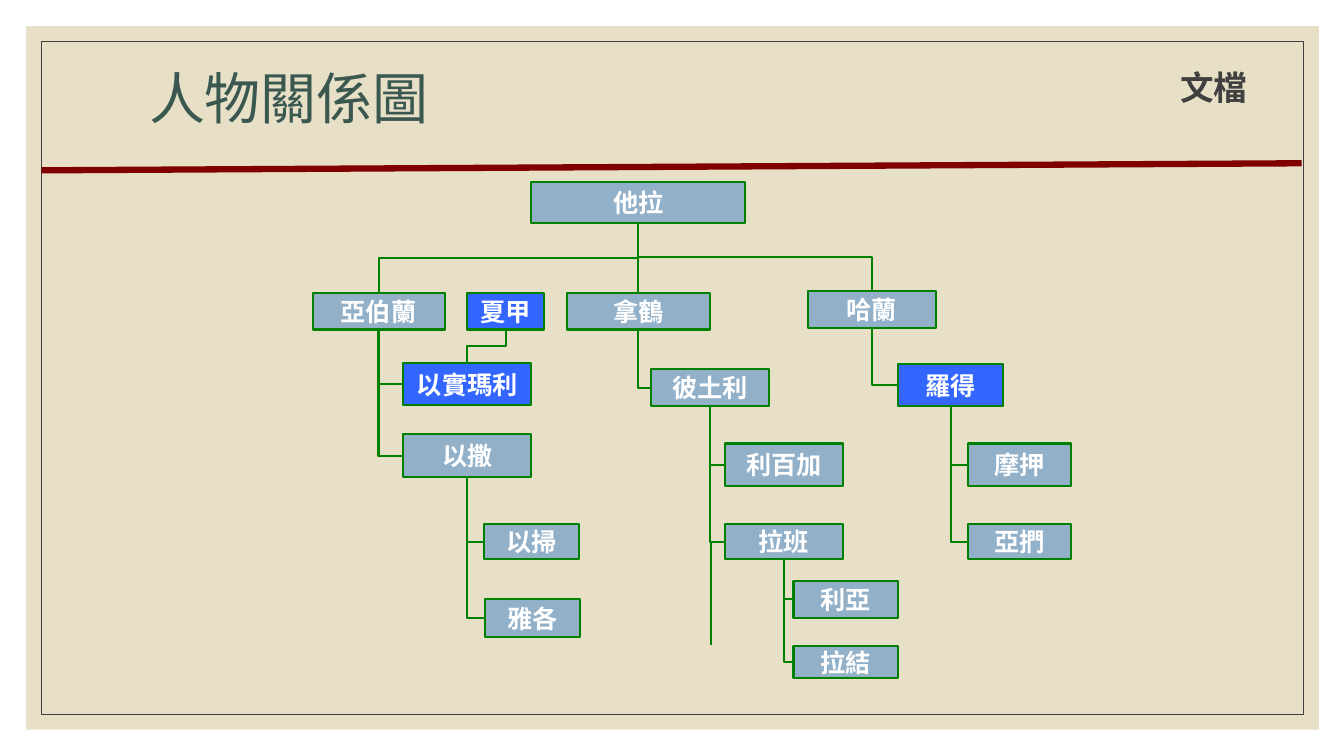
import lxml.etree
import pptx
import pptx.dml.color
import pptx.enum.shapes
import pptx.enum.text
import pptx.oxml.ns
import pptx.util

UNIT = pptx.util.Inches(1)  # one column or row of the page grid
COLORS = {"paper": "E7E0C7", "frame": "404040", "family": "92B0C8", "outsider": "3366FF",
          "branch": "008000", "rule": "800000", "title": "3A5750", "label": "FFFFFF"}
FORMATS = {
    "title": {"size": pptx.util.Pt(40), "name": "Lato", "bold": False},
    "label": {"size": pptx.util.Pt(18), "name": "Times New Roman", "bold": True},
    "frame": {"size": pptx.util.Pt(24), "name": "Times New Roman", "bold": True},
}
TOP, LEFT, BOTTOM = 0, 1, 2  # connection sites of a box

# name: (column, row, width, height)
PEOPLE = {
    "他拉": (5.27, 1.81, 2.12, 0.4),
    "亞伯蘭": (3.1, 2.91, 1.31, 0.36),
    "夏甲": (4.63, 2.91, 0.77, 0.36),
    "拿鶴": (5.62, 2.91, 1.42, 0.36),
    "哈蘭": (8.01, 2.89, 1.27, 0.36),
    "以實瑪利": (4, 3.6, 1.27, 0.42),
    "以撒": (4, 4.31, 1.27, 0.42),
    "以掃": (4.8, 5.2, 0.94, 0.35),
    "雅各": (4.81, 5.94, 0.94, 0.38),
    "彼土利": (6.46, 3.66, 1.17, 0.37),
    "利百加": (7.19, 4.4, 1.17, 0.42),
    "拉班": (7.19, 5.2, 1.17, 0.35),
    "利亞": (7.87, 5.76, 1.04, 0.37),
    "拉結": (7.87, 6.41, 1.04, 0.32),
    "羅得": (8.91, 3.61, 1.04, 0.42),
    "摩押": (9.6, 4.4, 1.02, 0.42),
    "亞捫": (9.6, 5.2, 1.02, 0.35),
}
OUTSIDERS = {"夏甲", "以實瑪利", "羅得"}
FORKS = [("他拉", "亞伯蘭"), ("他拉", "哈蘭"), ("夏甲", "以實瑪利")]
SIDE_BRANCHES = {
    "亞伯蘭": ["以實瑪利", "以撒"],
    "以撒": ["以掃", "雅各"],
    "拿鶴": ["彼土利"],
    "彼土利": ["利百加", "拉班"],
    "拉班": ["利亞", "拉結"],
    "哈蘭": ["羅得"],
    "羅得": ["摩押", "亞捫"],
}


def grid(*cells):
    return [pptx.util.Emu(round(cell * UNIT)) for cell in cells]


def rgb(color):
    return pptx.dml.color.RGBColor.from_string(COLORS[color])


def write(box, text, style, align):
    frame = box.text_frame
    frame.vertical_anchor = pptx.enum.text.MSO_ANCHOR.MIDDLE
    para = frame.paragraphs[0]
    para.alignment = align
    span = para.add_run()
    span.text = text
    for key, value in FORMATS[style].items():
        setattr(span.font, key, value)
    span.font.color.rgb = rgb(style)
    return para


def add_box(page, kind, place, fill=None, line=None, weight=0):
    box = page.shapes.add_shape(kind, *grid(*place))
    box.shadow.inherit = False
    if fill:
        box.fill.solid()
        box.fill.fore_color.rgb = rgb(fill)
    else:
        box.fill.background()
    if line:
        box.line.color.rgb = rgb(line)
        box.line.width = pptx.util.Pt(weight)
    else:
        box.line.fill.background()
    return box


def add_text(page, place, text, style, align, wrap):
    box = page.shapes.add_textbox(*grid(*place))
    box.text_frame.word_wrap = wrap
    return write(box, text, style, align)


def add_person(page, name, place):
    fill = "outsider" if name in OUTSIDERS else "family"
    kind = pptx.enum.shapes.MSO_SHAPE.FLOWCHART_PROCESS
    box = add_box(page, kind, place, fill, "branch", 1.5)
    write(box, name, "label", pptx.enum.text.PP_ALIGN.CENTER)
    return box


def add_line(page, ends=(0, 0, 0, 0), kind="STRAIGHT", color="branch", weight=1.5):
    connector_type = pptx.enum.shapes.MSO_CONNECTOR[kind]
    line = page.shapes.add_connector(connector_type, *grid(*ends))
    line.line.color.rgb = rgb(color)
    line.line.width = pptx.util.Pt(weight)
    lxml.etree.SubElement(line.element.spPr, pptx.oxml.ns.qn("a:effectLst"))
    return line


def join(page, start, start_site, end, end_site, kind="ELBOW"):
    line = add_line(page, kind=kind)
    line.begin_connect(start, start_site)
    line.end_connect(end, end_site)
    return line


def add_fork(page, parent, child):
    """Join the parent's bottom to the child's top with a level middle part."""
    line = join(page, parent, BOTTOM, child, TOP)
    goes_right = line.end_x > line.begin_x
    center_x = line.left + line.width // 2
    center_y = line.top + line.height // 2
    width, height = line.height, line.width
    turned = {"left": center_x - width // 2, "top": center_y - height // 2,
              "width": width, "height": height}
    for key, value in turned.items():
        setattr(line, key, value)
    transform = line.element.spPr.xfrm
    transform.set("rot", "16200000" if goes_right else "5400000")
    transform.set("flipH", "1" if goes_right else "0")


def add_side_branch(page, parent, child):
    """Join the child's left side to the parent's bottom with one corner."""
    line = join(page, child, LEFT, parent, BOTTOM)
    geometry = line.element.spPr.find(pptx.oxml.ns.qn("a:prstGeom"))
    geometry.set("prst", "bentConnector2")


def main():
    deck = pptx.Presentation()
    deck.slide_width, deck.slide_height = grid(13.33, 7.5)
    page = deck.slides.add_slide(deck.slide_layouts[6])
    align = pptx.enum.text.PP_ALIGN
    rectangle = pptx.enum.shapes.MSO_SHAPE.RECTANGLE

    add_box(page, rectangle, (0.26, 0.26, 12.82, 6.98), fill="paper")
    add_box(page, rectangle, (0.41, 0.41, 12.52, 6.68), line="frame", weight=0.5)
    title = add_text(page, (1.38, 0.4, 10.53, 1.22), "人物關係圖", "title", align.LEFT, True)
    title.line_spacing = 0.9
    add_text(page, (11.6, 0.61, 0.88, 0.5), "文檔", "frame", align.CENTER, False)
    add_line(page, (0.41, 1.69, 12.91, 1.62), color="rule", weight=4.5)

    boxes = {name: add_person(page, name, place) for name, place in PEOPLE.items()}
    for parent, child in FORKS:
        add_fork(page, boxes[parent], boxes[child])
    join(page, boxes["他拉"], BOTTOM, boxes["拿鶴"], TOP, "STRAIGHT")
    for parent, children in SIDE_BRANCHES.items():
        for child in children:
            add_side_branch(page, boxes[parent], boxes[child])
    add_line(page, (7.05, 5.37, 7.05, 6.4))

    deck.save("out.pptx")


if __name__ == "__main__":
    main()
